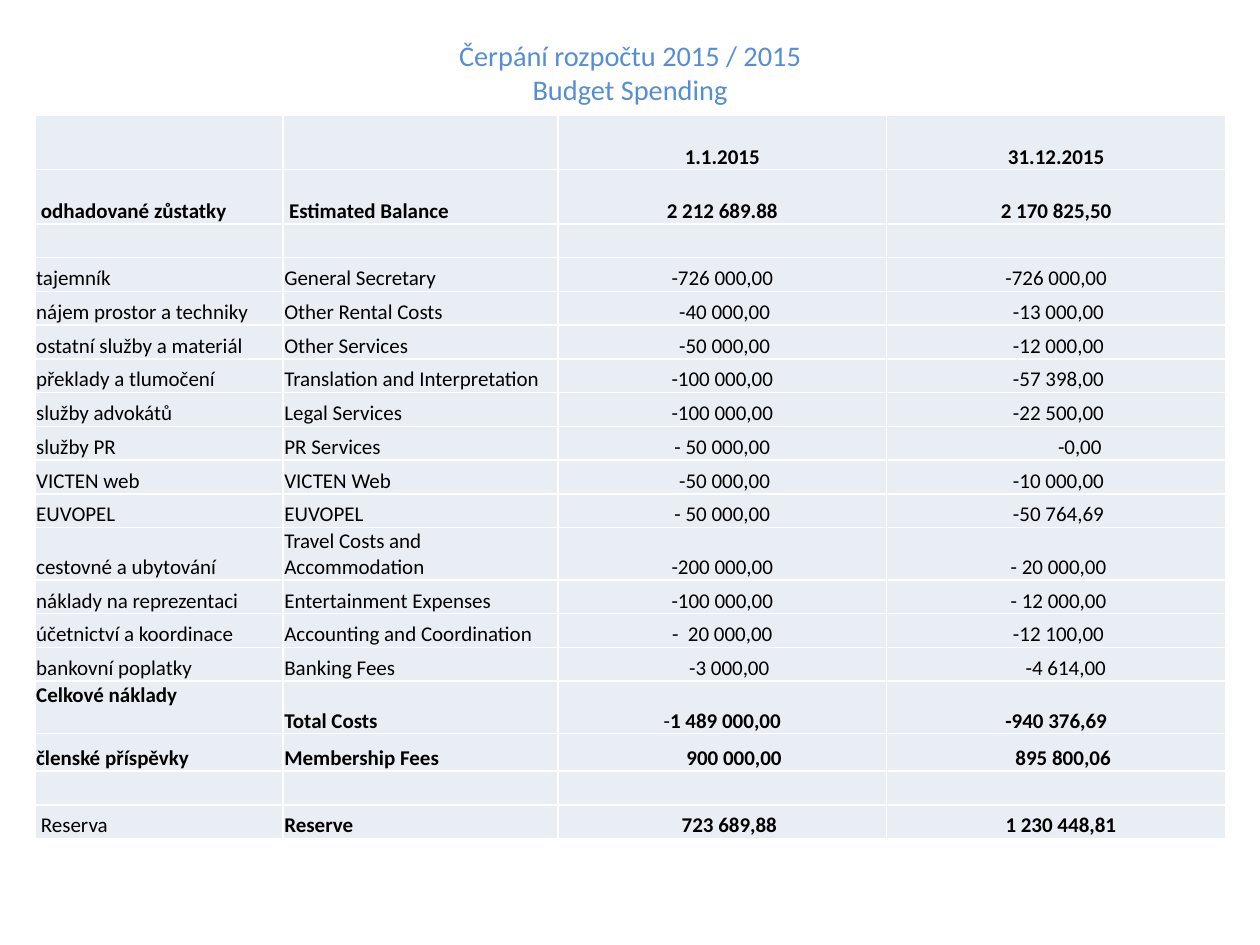
from dataclasses import dataclass
from typing import Union

from lxml.etree import SubElement
from pptx import Presentation
from pptx.dml.color import RGBColor
from pptx.enum.text import MSO_ANCHOR, PP_ALIGN
from pptx.oxml import parse_xml
from pptx.oxml.ns import nsdecls, qn
from pptx.util import Pt

FONT = "Calibri"
BODY_SIZE = 12
INSET = 0.7
CELL_FILL = "E9EDF4"
BORDER = "FFFFFF"
COLUMN_WIDTHS = (141.8, 157, 187.9, 193.7)
REGULAR_HEIGHT = 19.3
TALL_HEIGHT = 31
TWO_LINE_HEIGHT = 30


@dataclass(frozen=True)
class Entry:
    text: str
    bold: bool = False
    indent: float = 0
    light_sign: str = ""
    anchor: MSO_ANCHOR = MSO_ANCHOR.BOTTOM


@dataclass(frozen=True)
class BudgetLine:
    czech: Union[str, Entry] = ""
    english: str = ""
    opening: Union[str, Entry] = ""
    closing: Union[str, Entry] = ""
    bold: bool = False
    height: float = REGULAR_HEIGHT

    def entries(self) -> list[Entry]:
        columns = (self.czech, self.english, self.opening, self.closing)
        return [c if isinstance(c, Entry) else Entry(c, self.bold) for c in columns]


BUDGET = (
    BudgetLine("", "", "1.1.2015", "31.12.2015", True, TALL_HEIGHT),
    BudgetLine(" odhadované zůstatky", " Estimated Balance",
               "2 212 689.88", "2 170 825,50", True, TALL_HEIGHT),
    BudgetLine(),
    BudgetLine("tajemník", "General Secretary", "-726 000,00", "-726 000,00"),
    BudgetLine("nájem prostor a techniky", "Other Rental Costs", " -40 000,00", " -13 000,00"),
    BudgetLine("ostatní služby a materiál", "Other Services", " -50 000,00", " -12 000,00"),
    BudgetLine("překlady a tlumočení", "Translation and Interpretation",
               "-100 000,00", " -57 398,00"),
    BudgetLine("služby advokátů", "Legal Services", "-100 000,00", " -22 500,00"),
    BudgetLine("služby PR", "PR Services", "- 50 000,00", Entry("-0,00", indent=27)),
    BudgetLine("VICTEN web", "VICTEN Web", " -50 000,00", " -10 000,00"),
    BudgetLine("EUVOPEL", "EUVOPEL", "- 50 000,00", " -50 764,69"),
    BudgetLine("cestovné a ubytování", "Travel Costs and Accommodation",
               "-200 000,00", " - 20 000,00", height=TWO_LINE_HEIGHT),
    BudgetLine("náklady na reprezentaci", "Entertainment Expenses",
               "-100 000,00", " - 12 000,00"),
    BudgetLine("účetnictví a koordinace", "Accounting and Coordination",
               "-  20 000,00", " -12 100,00"),
    BudgetLine("bankovní poplatky", "Banking Fees",
               Entry("-3 000,00", indent=8), Entry("-4 614,00", indent=11)),
    BudgetLine(Entry("Celkové náklady", True, anchor=MSO_ANCHOR.TOP), "Total Costs",
               Entry("1 489 000,00", True, light_sign="-"), "-940 376,69",
               True, TWO_LINE_HEIGHT),
    BudgetLine("členské příspěvky", "Membership Fees",
               Entry("900 000,00", True, 13.5), Entry("895 800,06", True, 8), True, 21.4),
    BudgetLine(),
    BudgetLine(Entry(" Reserva"), "Reserve",
               Entry("723 689,88", True, 8), Entry("1 230 448,81", True, 5.4), True),
)


def rgb(hex_color: str) -> RGBColor:
    return RGBColor.from_string(hex_color)


def add_text(paragraph, text: str, *, size: float = BODY_SIZE, color: str = "000000",
             bold: bool = False, align: PP_ALIGN = PP_ALIGN.LEFT) -> None:
    paragraph.alignment = align
    run = paragraph.add_run()
    run.text = text
    run.font.name = FONT
    run.font.size = Pt(size)
    run.font.bold = bold
    run.font.color.rgb = rgb(color)


def add_borders(cell) -> None:
    properties = cell._tc.get_or_add_tcPr()
    for position, side in enumerate(("lnL", "lnR", "lnT", "lnB")):
        properties.insert(position, parse_xml(
            f'<a:{side} {nsdecls("a")} w="{Pt(1)}"><a:solidFill>'
            f'<a:srgbClr val="{BORDER}"/></a:solidFill></a:{side}>'))


def fill_cell(cell, entry: Entry, align: PP_ALIGN) -> None:
    cell.fill.solid()
    cell.fill.fore_color.rgb = rgb(CELL_FILL)
    add_borders(cell)
    cell.margin_left = Pt(INSET + entry.indent)
    cell.margin_right = cell.margin_top = Pt(INSET)
    cell.margin_bottom = 0
    cell.vertical_anchor = entry.anchor
    paragraph = cell.text_frame.paragraphs[0]
    if entry.light_sign:
        add_text(paragraph, entry.light_sign, align=align)
    if entry.text:
        add_text(paragraph, entry.text, bold=entry.bold, align=align)
    else:
        SubElement(paragraph._p, qn("a:endParaRPr"), sz=str(BODY_SIZE * 100))


def add_title(slide, lines: tuple[str, ...]) -> None:
    title = slide.shapes.add_textbox(Pt(36), Pt(21.6), Pt(648), Pt(39)).text_frame
    title.word_wrap = True
    title.vertical_anchor = MSO_ANCHOR.MIDDLE
    title.margin_top = title.margin_bottom = 0
    paragraph = title.paragraphs[0]
    for number, line in enumerate(lines):
        if number:
            paragraph.add_line_break()
        add_text(paragraph, line, size=16.2, color="558ED5", align=PP_ALIGN.CENTER)


def add_budget(slide, budget: tuple[BudgetLine, ...]) -> None:
    table = slide.shapes.add_table(
        len(budget), len(COLUMN_WIDTHS), Pt(20), Pt(66),
        Pt(sum(COLUMN_WIDTHS)), Pt(sum(line.height for line in budget))).table
    table.first_row = table.horz_banding = False
    for column, width in zip(table.columns, COLUMN_WIDTHS):
        column.width = Pt(width)
    for row, line in zip(table.rows, budget):
        row.height = Pt(line.height)
        for position, (cell, entry) in enumerate(zip(row.cells, line.entries())):
            fill_cell(cell, entry, PP_ALIGN.LEFT if position < 2 else PP_ALIGN.CENTER)


def main() -> None:
    """Build the budget spending slide."""
    presentation = Presentation()
    presentation.slide_width, presentation.slide_height = Pt(720), Pt(540)
    slide = presentation.slides.add_slide(presentation.slide_layouts[6])
    add_title(slide, ("Čerpání rozpočtu 2015 / 2015", "Budget Spending"))
    add_budget(slide, BUDGET)
    presentation.save("out.pptx")


if __name__ == "__main__":
    main()
